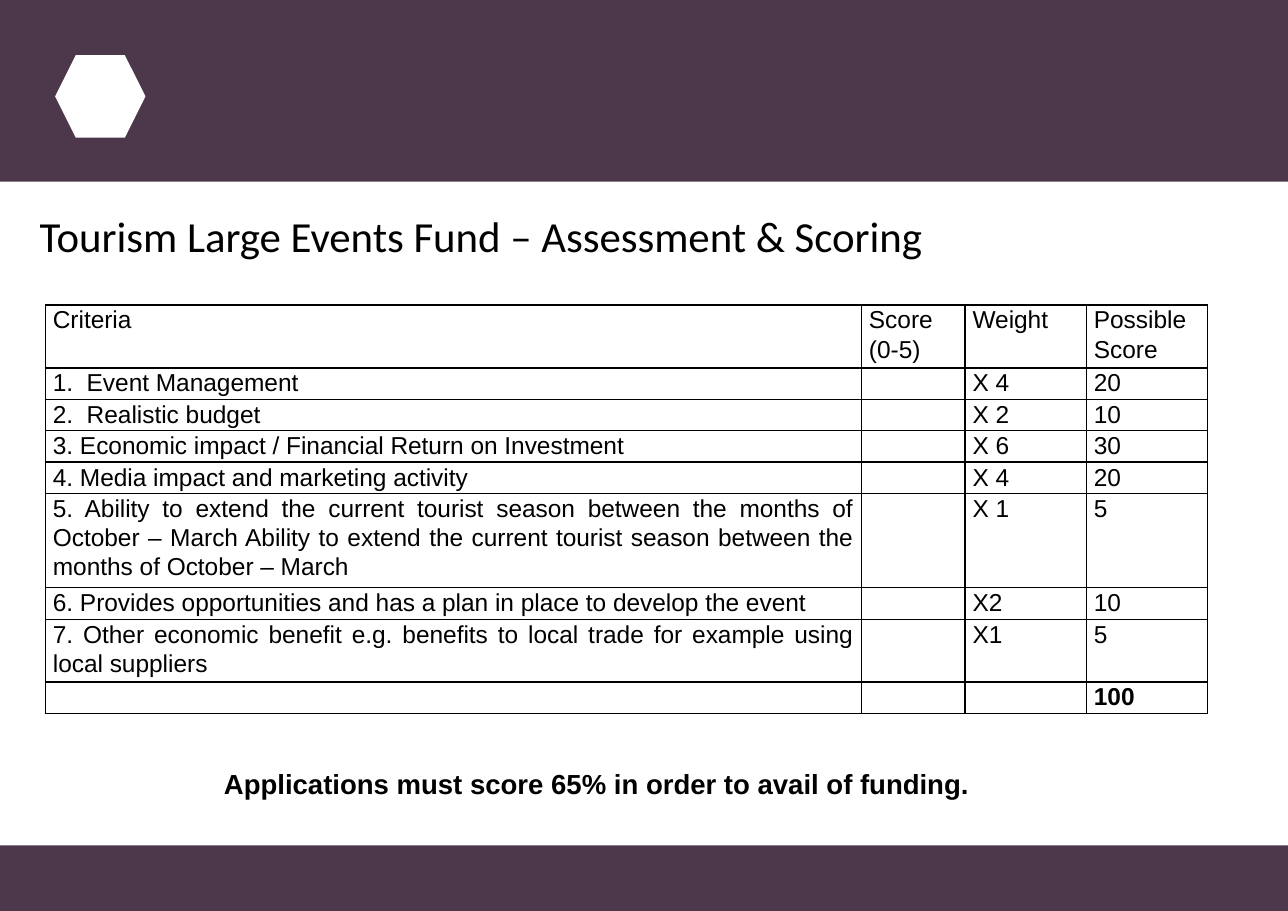
from lxml import etree
from pptx import Presentation
from pptx.dml.color import RGBColor
from pptx.enum.shapes import MSO_SHAPE
from pptx.enum.text import MSO_ANCHOR, MSO_AUTO_SIZE, PP_ALIGN
from pptx.oxml.ns import qn
from pptx.util import Inches, Pt

RECTANGLE = MSO_SHAPE.RECTANGLE
HEXAGON = MSO_SHAPE.HEXAGON
TOP = MSO_ANCHOR.TOP
NO_AUTOFIT = MSO_AUTO_SIZE.NONE
LEFT, CENTER, JUSTIFY = PP_ALIGN.LEFT, PP_ALIGN.CENTER, PP_ALIGN.JUSTIFY

TITLE_ONLY_LAYOUT = 5
COLUMN_WIDTHS = [7.4, 0.94, 1.1, 1.1]
ROW_LINES = [2, 1, 1, 1, 1, 3, 1, 2, 1]
CRITERIA = [
    ("Criteria", "Score (0-5)", "Weight", "Possible Score"),
    ("1.  Event Management", "", "X 4", "20"),
    ("2.  Realistic budget", "", "X 2", "10"),
    ("3. Economic impact / Financial Return on Investment", "", "X 6", "30"),
    ("4. Media impact and marketing activity", "", "X 4", "20"),
    ("5. Ability to extend the current tourist season between the months of "
     "October – March Ability to extend the current tourist season between "
     "the months of October – March", "", "X 1", "5"),
    ("6. Provides opportunities and has a plan in place to develop the event",
     "", "X2", "10"),
    ("7. Other economic benefit e.g. benefits to local trade for example "
     "using local suppliers", "", "X1", "5"),
    ("", "", "", "100"),
]


def color(hex_string):
    return RGBColor.from_string(hex_string)


def write_text(frame, text, size=16, font="Arial", bold=False, align=LEFT,
               line_spacing=1.07, ink="000000"):
    frame.word_wrap = True
    frame.vertical_anchor = TOP
    paragraph = frame.paragraphs[0]
    paragraph.alignment = align
    paragraph.line_spacing = line_spacing
    if not text:
        end = etree.SubElement(paragraph._p, qn("a:endParaRPr"))
        end.set("sz", str(size * 100))
        etree.SubElement(end, qn("a:latin")).set("typeface", font)
        return
    run = paragraph.add_run()
    run.text = text
    run.font.size = Pt(size)
    run.font.name = font
    run.font.bold = bold
    run.font.color.rgb = color(ink)


class SlideBuilder:
    band = "4C374B"
    white = "FFFFFF"
    ink = "000000"

    def __init__(self, presentation):
        self.width = presentation.slide_width
        self.height = presentation.slide_height
        layout = presentation.slide_layouts[TITLE_ONLY_LAYOUT]
        self.slide = presentation.slides.add_slide(layout)

    def place(self, left, top, width, height):
        return (round(self.width * left / 100), round(self.height * top / 100),
                round(self.width * width / 100), round(self.height * height / 100))

    def shape(self, kind, area, fill):
        shape = self.slide.shapes.add_shape(kind, *self.place(*area))
        shape.shadow.inherit = False
        shape.fill.solid()
        shape.fill.fore_color.rgb = color(fill)
        shape.line.fill.background()

    def title(self, text, area):
        title = self.slide.shapes.title
        title.left, title.top, title.width, title.height = self.place(*area)
        title.text_frame.auto_size = NO_AUTOFIT
        write_text(title.text_frame, text, size=28, font="Calibri", line_spacing=1)

    def text(self, text, area, **style):
        box = self.slide.shapes.add_textbox(*self.place(*area))
        write_text(box.text_frame, text, **style)

    def border(self, cell):
        properties = cell._tc.get_or_add_tcPr()
        for side in ("lnL", "lnR", "lnT", "lnB"):
            line = etree.SubElement(properties, qn(f"a:{side}"), w=str(Pt(1)))
            fill = etree.SubElement(line, qn("a:solidFill"))
            etree.SubElement(fill, qn("a:srgbClr"), val=self.ink)

    def table(self, rows, widths, lines, area):
        left, top, width, height = self.place(*area)
        table = self.slide.shapes.add_table(
            len(rows), len(widths), left, top, width, height).table
        table.first_row = False
        table.horz_banding = False
        for column, share in zip(table.columns, widths):
            column.width = round(width * share / sum(widths))
        for row, line_count, texts in zip(table.rows, lines, rows):
            row.height = round(height * line_count / sum(lines))
            for cell, text in zip(row.cells, texts):
                cell.margin_left = cell.margin_right = Inches(0.07)
                cell.margin_top = cell.margin_bottom = 0
                self.border(cell)
                cell.fill.background()
                write_text(cell.text_frame, text, align=JUSTIFY,
                           bold=texts is rows[-1])


def main():
    presentation = Presentation()
    presentation.slide_width = Inches(11.69)
    presentation.slide_height = Inches(8.27)
    builder = SlideBuilder(presentation)
    builder.shape(RECTANGLE, (0, 0, 100, 19.95), builder.band)
    builder.shape(HEXAGON, (4.28, 6.05, 7.02, 9.07), builder.white)
    builder.shape(RECTANGLE, (0, 92.8, 100, 7.2), builder.band)
    builder.title("Tourism Large Events Fund – Assessment & Scoring",
                  (2.22, 22.37, 76.13, 6.9))
    builder.table(CRITERIA, COLUMN_WIDTHS, ROW_LINES, (3.51, 33.49, 90.25, 44.86))
    builder.text("Applications must score 65% in order to avail of funding.",
                 (10.95, 83.31, 70.74, 5.2), size=18, bold=True, align=CENTER)
    presentation.save("out.pptx")


if __name__ == "__main__":
    main()
